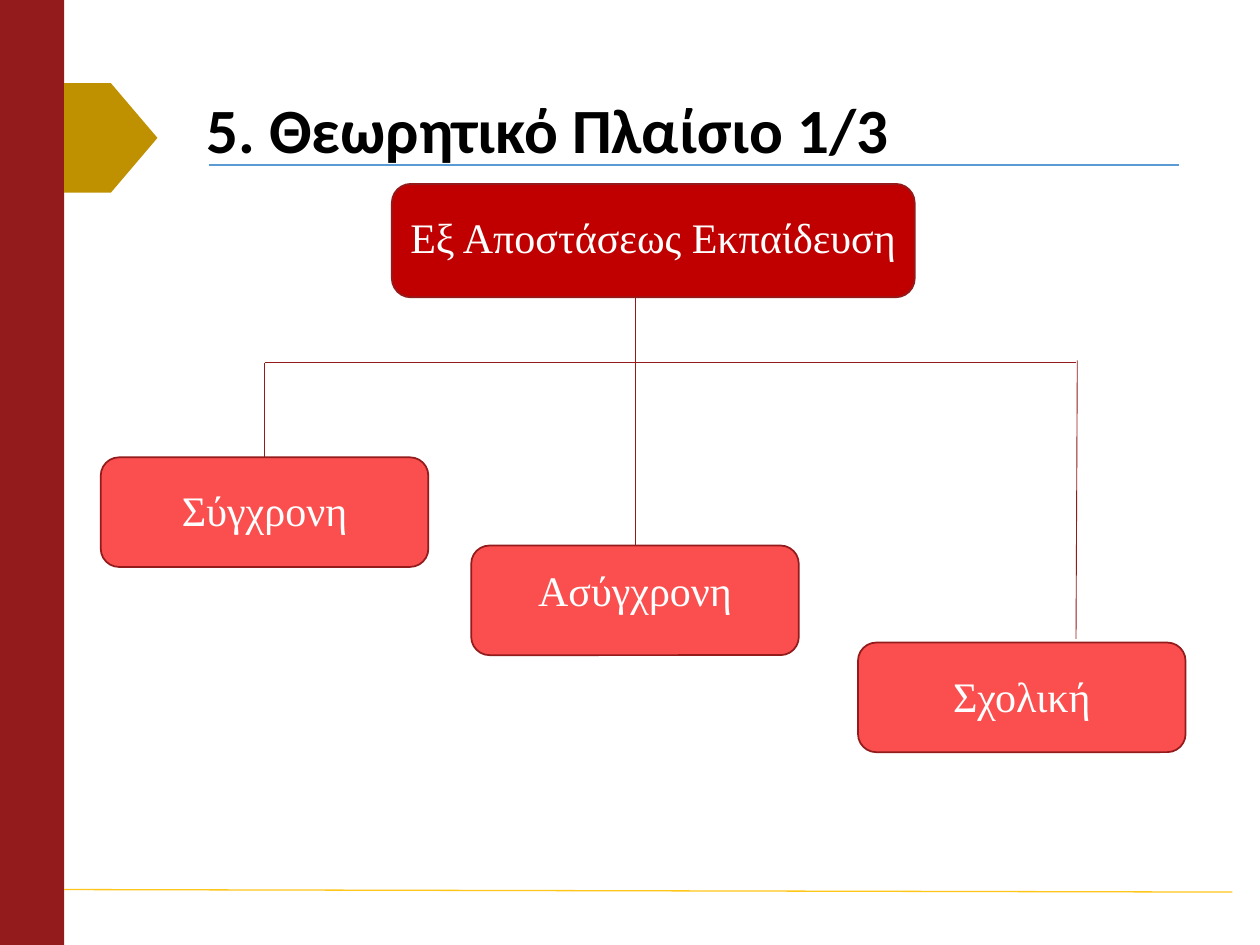
from lxml import etree
from pptx import Presentation
from pptx.dml.color import RGBColor
from pptx.enum.shapes import MSO_CONNECTOR, MSO_SHAPE
from pptx.enum.text import MSO_ANCHOR, PP_ALIGN
from pptx.oxml.ns import qn
from pptx.util import Inches, Pt

DARK_RED = RGBColor(0x93, 0x1B, 0x1B)
ROOT_RED = RGBColor(0xC0, 0x00, 0x00)
BRANCH_RED = RGBColor(0xFB, 0x4F, 0x4F)
GOLD = RGBColor(0xBF, 0x90, 0x00)
YELLOW = RGBColor(0xFF, 0xC6, 0x1A)
BLUE = RGBColor(0x5B, 0x9B, 0xD5)
BLACK = RGBColor(0, 0, 0)
WHITE = RGBColor(0xFF, 0xFF, 0xFF)

TITLE_FONT = {"name": "Calibri", "size": Pt(36), "bold": True}
LABEL_FONT = {"name": "Times New Roman", "size": Pt(24)}


def add_box(slide, kind, box, fill, outline=None):
    shape = slide.shapes.add_shape(kind, *map(Inches, box))
    shape.shadow.inherit = False
    shape.fill.solid()
    shape.fill.fore_color.rgb = fill
    if outline is None:
        shape.line.fill.background()
    else:
        shape.line.color.rgb = outline
        shape.line.width = Pt(1)


def add_line(slide, start, end, color, width):
    line = slide.shapes.add_connector(
        MSO_CONNECTOR.STRAIGHT, *map(Inches, (*start, *end)))
    line.line.color.rgb = color
    line.line.width = Pt(width)
    etree.SubElement(line._element.spPr, qn("a:effectLst"))


def add_text(slide, box, text, font, color, align, anchor=MSO_ANCHOR.TOP, spacing=1.0):
    frame = slide.shapes.add_textbox(*map(Inches, box)).text_frame
    frame.word_wrap = True
    frame.vertical_anchor = anchor
    paragraph = frame.paragraphs[0]
    paragraph.alignment = align
    paragraph.line_spacing = spacing
    run = paragraph.add_run()
    run.text = text
    for name, value in font.items():
        setattr(run.font, name, value)
    run.font.color.rgb = color


def add_frame(slide, width, height):
    """Place the side band, the pentagon marker and the footer rule."""
    band = 0.51
    add_box(slide, MSO_SHAPE.RECTANGLE, (0, 0, band, height), DARK_RED)
    add_line(slide, (band, 7.06), (width - 0.22, 7.08), YELLOW, 0.75)
    add_box(slide, MSO_SHAPE.PENTAGON, (band, 0.66, 0.74, 0.87), GOLD)


def add_title(slide, box, text):
    left, top, width, _ = box
    add_line(slide, (left + 0.12, top + 0.67), (left + width - 0.05, top + 0.67), BLUE, 0.75)
    add_text(slide, box, text, TITLE_FONT, BLACK, PP_ALIGN.LEFT, MSO_ANCHOR.MIDDLE, 0.9)


def add_node(slide, box, text, fill, label_left, label_top, label_width):
    """Draw a rounded box with a centred label laid over it."""
    add_box(slide, MSO_SHAPE.ROUNDED_RECTANGLE, box, fill, DARK_RED)
    add_text(slide, (label_left, label_top, label_width, 0.5), text,
             LABEL_FONT, WHITE, PP_ALIGN.CENTER)


def add_hierarchy(slide, box):
    """Draw the root, its three stepped branches and the lines between them."""
    left, top, width, _ = box
    node_width, node_height = 2.6, 0.87
    root_height = 0.9
    bus = top + 1.42
    right = left + width

    add_node(slide, (left + 2.31, top, 4.15, root_height),
             "Εξ Αποστάσεως Εκπαίδευση", ROOT_RED, left + 2.12, top + 0.17, 4.53)

    branches = [
        ("Σύγχρονη", left, 3.63, 0.17),
        ("Ασύγχρονη", left + 2.94, 4.33, 0.10),
        ("Σχολική", right - node_width, 5.10, 0.17),
    ]
    for text, node_left, node_top, label_drop in branches:
        add_node(slide, (node_left, node_top, node_width, node_height), text,
                 BRANCH_RED, node_left + 0.185, node_top + label_drop, node_width - 0.37)

    first, middle, last = left + 1.3, left + 4.24, right - 0.87
    lines = [
        ((first, bus), (last, bus)),
        ((first, bus), (first, 3.63)),
        ((middle, top + root_height), (middle, 4.33)),
        ((last + 0.01, bus - 0.02), (last, 5.07)),
    ]
    for start, end in lines:
        add_line(slide, start, end, DARK_RED, 0.5)


def main():
    width, height = 10, 7.5
    presentation = Presentation()
    presentation.slide_width = Inches(width)
    presentation.slide_height = Inches(height)
    slide = presentation.slides.add_slide(presentation.slide_layouts[6])
    add_frame(slide, width, height)
    add_title(slide, (1.54, 0.64, 7.87, 0.84), "5. Θεωρητικό Πλαίσιο 1/3")
    add_hierarchy(slide, (0.8, 1.46, 8.61, 4.51))
    presentation.save("out.pptx")


if __name__ == "__main__":
    main()
